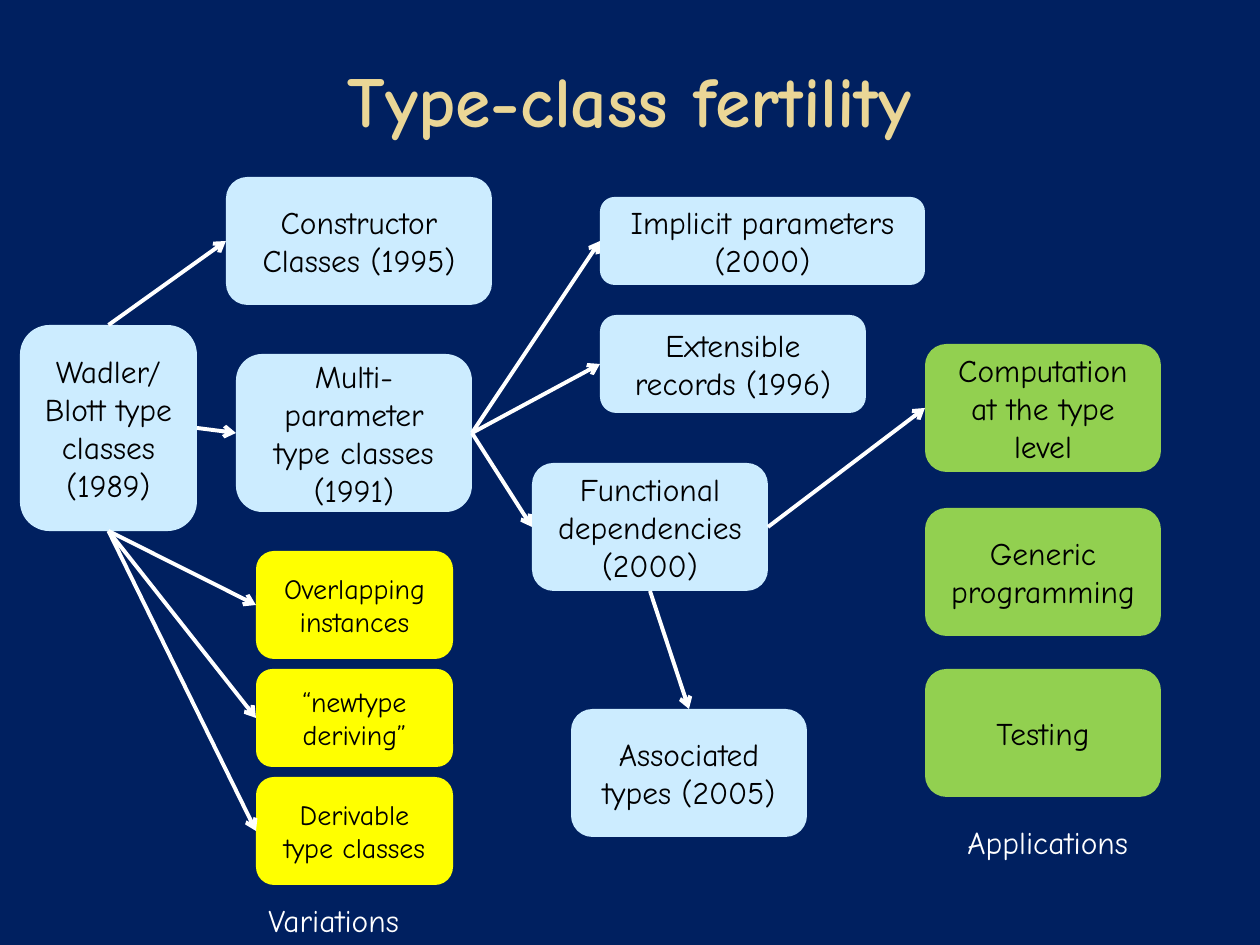
from lxml import etree
from pptx import Presentation
from pptx.dml.color import RGBColor
from pptx.enum.shapes import MSO_CONNECTOR, MSO_SHAPE
from pptx.enum.text import MSO_ANCHOR, MSO_AUTO_SIZE, PP_ALIGN
from pptx.oxml.ns import qn
from pptx.util import Pt

STRAIGHT = MSO_CONNECTOR.STRAIGHT
ROUNDED = MSO_SHAPE.ROUNDED_RECTANGLE
MIDDLE = MSO_ANCHOR.MIDDLE
CENTER, LEFT = PP_ALIGN.CENTER, PP_ALIGN.LEFT
NO_FIT = MSO_AUTO_SIZE.NONE
TOP_SIDE, LEFT_SIDE, BOTTOM_SIDE, RIGHT_SIDE = range(4)

EMU_PER_PX = 914400 / 126
FONT = "Comic Neue"
COLORS = {
    "background": "002060",
    "title": "EAD696",
    "feature": "CCECFF",
    "application": "92D050",
    "variation": "FFFF00",
    "ink": "000000",
    "white": "FFFFFF",
}

# name: (text, kind, left, top, width, height)
BOXES = {
    "wadler": ("Wadler/Blott type classes (1989)", "feature", 20, 325, 177, 206),
    "multi": ("Multi-parameter type classes (1991)", "feature", 236, 354, 236, 158),
    "functional": ("Functional dependencies (2000)", "feature", 532, 463, 236, 128),
    "constructor": ("Constructor Classes (1995)", "feature", 226, 177, 266, 128),
    "associated": ("Associated types (2005)", "feature", 571, 709, 236, 128),
    "implicit": ("Implicit parameters (2000)", "feature", 600, 197, 325, 88),
    "extensible": ("Extensible records (1996)", "feature", 600, 315, 266, 98),
    "computation": ("Computation at the type level", "application", 925, 344, 236, 128),
    "generic": ("Generic programming", "application", 925, 508, 236, 128),
    "testing": ("Testing", "application", 925, 669, 236, 128),
    "overlapping": ("Overlapping instances", "variation", 256, 551, 197, 108),
    "newtype": ("“newtype deriving”", "variation", 256, 669, 197, 98),
    "derivable": ("Derivable type classes", "variation", 256, 777, 197, 108),
}

# (start box, start side, end box, end side)
ARROWS = [
    ("wadler", RIGHT_SIDE, "multi", LEFT_SIDE),
    ("wadler", TOP_SIDE, "constructor", LEFT_SIDE),
    ("multi", RIGHT_SIDE, "functional", LEFT_SIDE),
    ("multi", RIGHT_SIDE, "implicit", LEFT_SIDE),
    ("multi", RIGHT_SIDE, "extensible", LEFT_SIDE),
    ("functional", RIGHT_SIDE, "computation", LEFT_SIDE),
    ("functional", BOTTOM_SIDE, "associated", TOP_SIDE),
    ("wadler", BOTTOM_SIDE, "overlapping", LEFT_SIDE),
    ("wadler", BOTTOM_SIDE, "newtype", LEFT_SIDE),
    ("wadler", BOTTOM_SIDE, "derivable", LEFT_SIDE),
]

LABELS = [
    ("Variations", 256, 895, 165, 50),
    ("Applications", 955, 817, 193, 50),
]


def px(length):
    return round(length * EMU_PER_PX)


def color(name):
    return RGBColor.from_string(COLORS[name])


def write(shape, text, size, ink, align=CENTER, bold=False):
    para = shape.text_frame.paragraphs[0]
    para.alignment = align
    span = para.add_run()
    span.text = text
    for key, value in {"name": FONT, "size": Pt(size), "bold": bold}.items():
        setattr(span.font, key, value)
    span.font.color.rgb = color(ink)


def set_frame(shape, **formats):
    for key, value in formats.items():
        setattr(shape.text_frame, key, value)


def add_title(page, text):
    title = page.shapes.title
    place = {"left": 63, "top": 20, "width": 1134, "height": 158}
    for key, value in place.items():
        setattr(title, key, px(value))
    set_frame(title, vertical_anchor=MIDDLE, auto_size=NO_FIT)
    write(title, text, 41, "title", bold=True)


def add_box(page, text, kind, *place):
    box = page.shapes.add_shape(ROUNDED, *map(px, place))
    box.shadow.inherit = False
    box.fill.solid()
    box.fill.fore_color.rgb = color(kind)
    box.line.fill.background()
    set_frame(box, word_wrap=True, vertical_anchor=MIDDLE)
    write(box, text, 16 if kind == "variation" else 18, "ink")
    return box


def add_arrow(page, start, start_side, end, end_side):
    arrow = page.shapes.add_connector(STRAIGHT, 0, 0, 0, 0)
    arrow.begin_connect(start, start_side)
    arrow.end_connect(end, end_side)
    arrow.line.color.rgb = color("white")
    arrow.line.width = Pt(2.25)
    properties = arrow.line._get_or_add_ln()
    etree.SubElement(properties, qn("a:tailEnd"), type="arrow")
    etree.SubElement(arrow._element.spPr, qn("a:effectLst"))


def add_label(page, text, *place):
    label = page.shapes.add_textbox(*map(px, place))
    set_frame(label, word_wrap=False)
    write(label, text, 18, "white", LEFT)


def main():
    deck = Presentation()
    deck.slide_width, deck.slide_height = px(1260), px(945)
    page = deck.slides.add_slide(deck.slide_layouts[5])
    page.background.fill.solid()
    page.background.fill.fore_color.rgb = color("background")

    add_title(page, "Type-class fertility")

    # Family tree of type-class features, variations and applications
    boxes = {name: add_box(page, *entry) for name, entry in BOXES.items()}
    for start, start_side, end, end_side in ARROWS:
        add_arrow(page, boxes[start], start_side, boxes[end], end_side)

    # Captions under the two coloured columns
    for label in LABELS:
        add_label(page, *label)

    deck.save("out.pptx")


if __name__ == "__main__":
    main()
